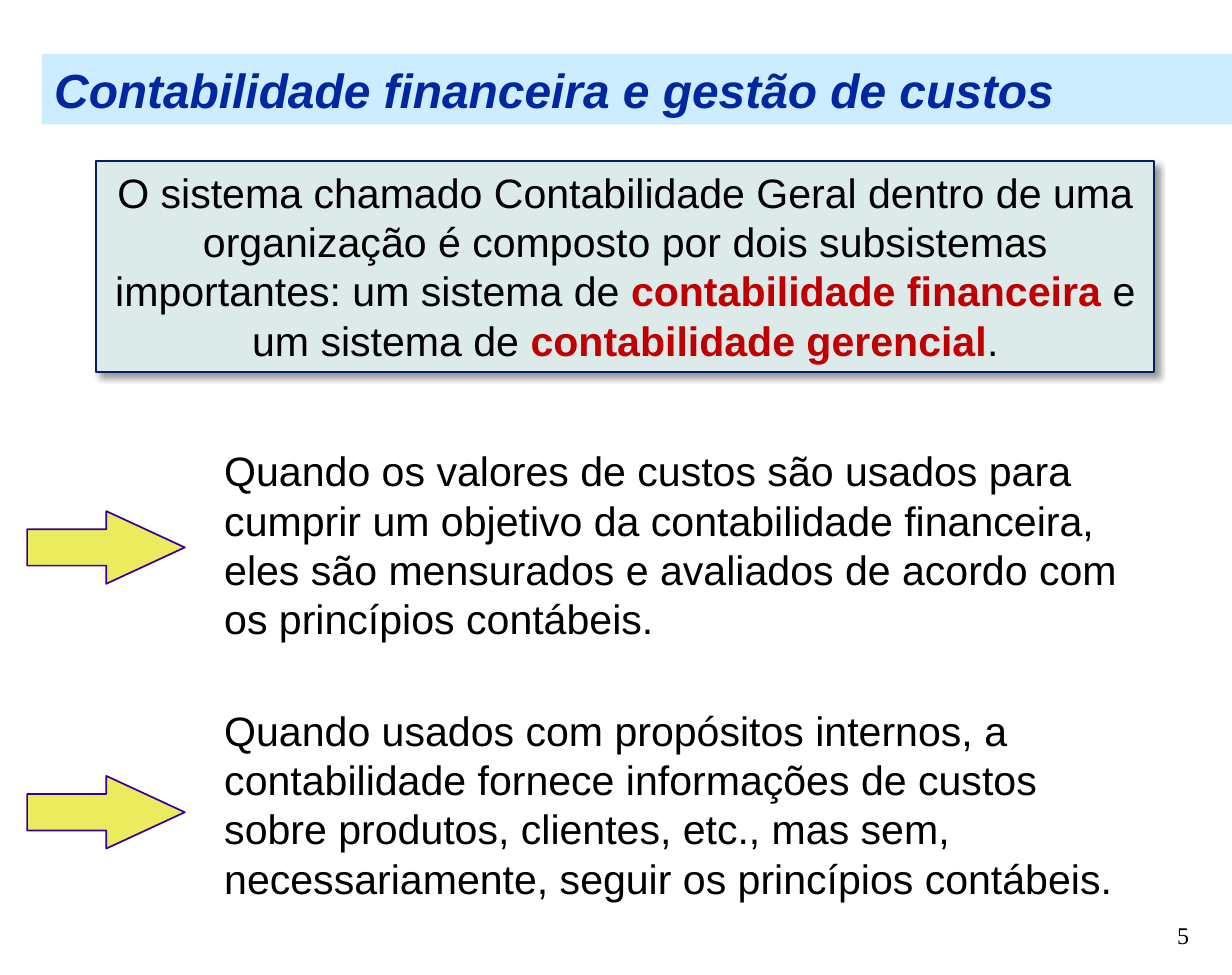
from lxml import etree
from pptx import Presentation
from pptx.dml.color import RGBColor
from pptx.enum import shapes, text
from pptx.oxml import ns
from pptx.util import Inches, Pt

# Content
TITLE = "Contabilidade financeira e gestão de custos"
INTRO = [  # (words, stressed)
    ("O sistema chamado Contabilidade Geral dentro de uma organização é "
     "composto por dois subsistemas importantes: um sistema de ", False),
    ("contabilidade financeira ", True),
    ("e um sistema de ", False),
    ("contabilidade gerencial", True),
    (".", False),
]
USES = [
    "Quando os valores de custos são usados para cumprir um objetivo da "
    "contabilidade financeira, eles são mensurados e avaliados de acordo "
    "com os princípios contábeis.",
    "Quando usados com propósitos internos, a contabilidade fornece "
    "informações de custos sobre produtos, clientes, etc., mas sem, "
    "necessariamente, seguir os princípios contábeis.",
]
NUMBER = "5"

# Colours
BLACK = RGBColor(0x00, 0x00, 0x00)
BLUE = RGBColor(0x00, 0x27, 0x9F)
SKY = RGBColor(0xCC, 0xEC, 0xFF)
RED = RGBColor(0xC0, 0x00, 0x00)
MIST = RGBColor(0xDD, 0xEA, 0xEA)
NAVY = RGBColor(0x00, 0x20, 0x60)
YELLOW = RGBColor(0xEA, 0xEC, 0x5E)
PURPLE = RGBColor(0x33, 0x00, 0x99)

# Places: left, top, width, height
BAND = (0.34, 0.44, 9.66, 0.57)
BOX = (0.78, 1.31, 8.59, 1.71)
BODY = (1.72, 3.57, 7.56, 3.9)
FOOT = (7.67, 7.33, 2.08, 0.53)
ARROW_TOP, ARROW_STEP = 4.15, 2.15


def place(shape, spot):
    shape.left, shape.top, shape.width, shape.height = map(Inches, spot)


def frame(shape, anchor=text.MSO_ANCHOR.TOP):
    box = shape.text_frame
    box.word_wrap = True
    box.auto_size = text.MSO_AUTO_SIZE.NONE
    box.vertical_anchor = anchor
    return box


def write(para, words, size, color=BLACK, bold=False, italic=False, name="Arial"):
    run = para.add_run()
    run.text = words
    font = run.font
    font.name, font.size = name, Pt(size)
    font.bold, font.italic = bold, italic
    font.color.rgb = color


def block(kind, spot, fill, line):
    shape = slide.shapes.add_shape(kind, *map(Inches, spot))
    shape.shadow.inherit = False
    shape.fill.solid()
    shape.fill.fore_color.rgb = fill
    shape.line.color.rgb = line
    shape.line.width = Pt(1)
    return shape


def shade(shape):
    effects = shape._element.spPr.find(ns.qn("a:effectLst"))
    drop = etree.SubElement(effects, ns.qn("a:outerShdw"), blurRad=str(Pt(4)),
                            dist=str(Pt(3)), dir=str(45 * 60000),
                            algn="tl", rotWithShape="0")
    color = etree.SubElement(drop, ns.qn("a:srgbClr"), val=str(BLACK))
    etree.SubElement(color, ns.qn("a:alpha"), val="40000")


deck = Presentation()
deck.slide_width = Inches(10)
deck.slide_height = Inches(95 / 12)
slide = deck.slides.add_slide(deck.slide_layouts[1])

# Title band
title = slide.shapes.title
place(title, BAND)
title.fill.solid()
title.fill.fore_color.rgb = SKY
para = frame(title).paragraphs[0]
para.alignment = text.PP_ALIGN.LEFT
write(para, TITLE, 28, BLUE, bold=True, italic=True)

# Uses of cost figures, without bullets
body = slide.placeholders[1]
place(body, BODY)
box = frame(body)
for i, words in enumerate(USES):
    para = box.paragraphs[0] if i == 0 else box.add_paragraph()
    para.space_before = Pt(0)
    para.space_after = Pt(36.5)
    props = para._p.get_or_add_pPr()
    props.set("marL", "0")
    props.set("indent", "0")
    etree.SubElement(props, ns.qn("a:buNone"))
    write(para, words, 24)

# One arrow for each use
for i in range(len(USES)):
    spot = (0.22, ARROW_TOP + i * ARROW_STEP, 1.28, 0.59)
    arrow = block(shapes.MSO_SHAPE.RIGHT_ARROW, spot, YELLOW, PURPLE)
    arrow.adjustments[1] = 1.08

# Introduction box
intro = block(shapes.MSO_SHAPE.RECTANGLE, BOX, MIST, NAVY)
shade(intro)
para = frame(intro).paragraphs[0]
para.alignment = text.PP_ALIGN.CENTER
for words, stress in INTRO:
    write(para, words, 24, RED if stress else BLACK, bold=stress)

# Page number
foot = slide.shapes.add_textbox(*map(Inches, FOOT))
para = frame(foot, text.MSO_ANCHOR.MIDDLE).paragraphs[0]
para.alignment = text.PP_ALIGN.RIGHT
write(para, NUMBER, 14, name="Times New Roman")

deck.save("out.pptx")
